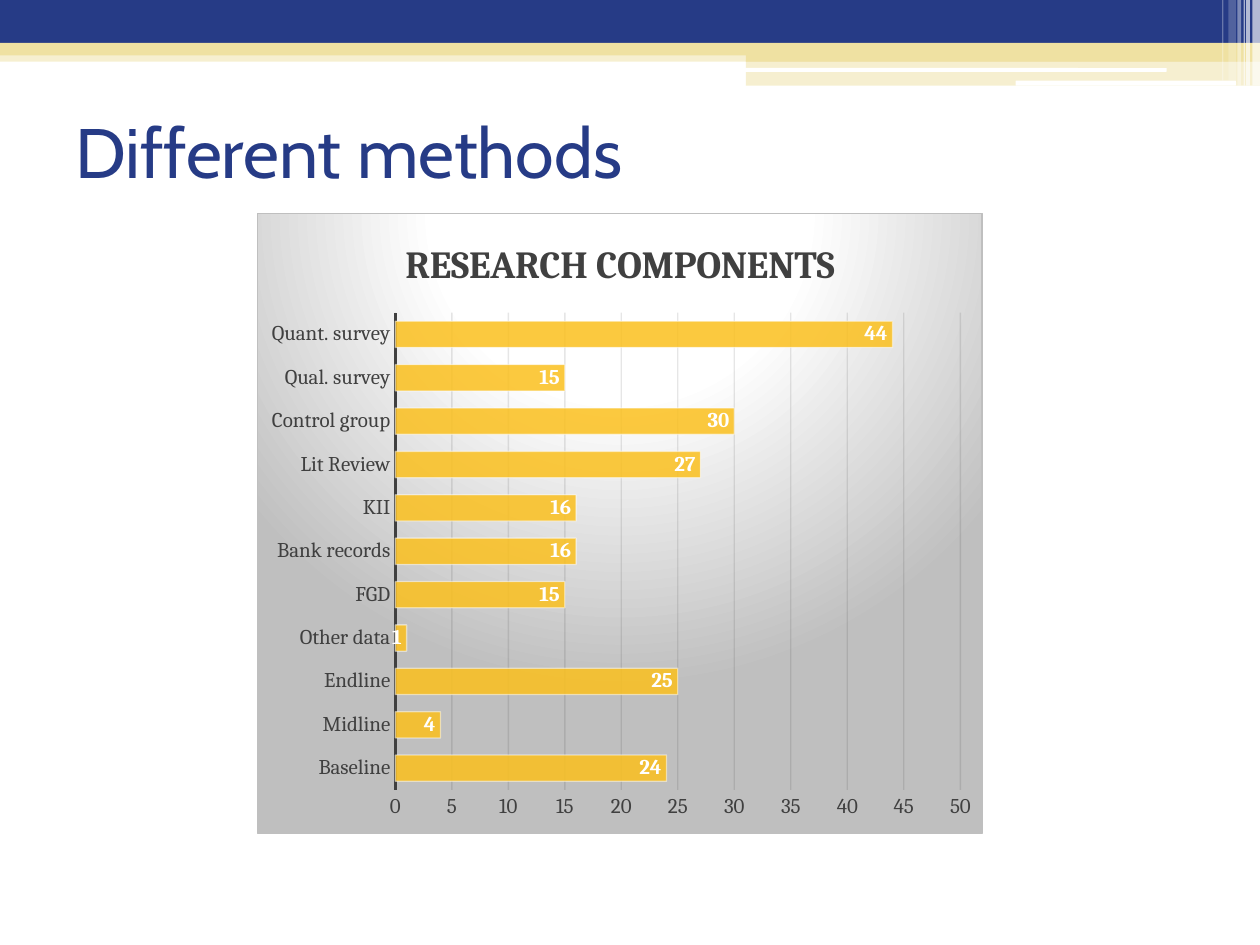
from lxml.etree import SubElement as Sub
from pptx import Presentation
from pptx.chart.data import CategoryChartData as Data
from pptx.dml.color import RGBColor as Rgb
from pptx.enum.chart import XL_CHART_TYPE as Kind, XL_LABEL_POSITION as Pos, XL_TICK_MARK as Tick
from pptx.enum.shapes import MSO_SHAPE as Form
from pptx.enum.text import MSO_ANCHOR as Anchor
from pptx.oxml import parse_xml as to_xml
from pptx.oxml.ns import nsdecls, qn
from pptx.util import Inches, Pt

HUES = {"navy": "263B86", "sand": "EFE1A2", "white": "FFFFFF", "gold": "FBC01E",
        "text": "404040", "grid": "0D0D0D", "edge": "BFBFBF"}
COLS, ROWS = 100, 75
CELL = Inches(0.1)

BANDS = [
    (0, 4, 100, 0.9, "sand", 50), (0, 0, 100, 3.4, "navy", 100),
    (0, 3.4, 100, 1, "sand", 100), (59.2, 3.9, 40.8, 1, "sand", 100),
    (59.2, 4.8, 40.8, 2, "sand", 50),
]
PILLS = [(59.1, 5.4, 33.5, 0.3), (80.6, 6.4, 17.5, 0.4)]
STRIPES = [(99.4, 0.6, 6.8, 65), (98.9, 0.3, 6.8, 65), (98.7, 0.1, 6.8, 60),
           (98.2, 0.3, 6.8, 40), (97.5, 0.6, 6.4, 20), (97, 0.1, 6.4, 30)]
COUNTS = {"Baseline": 24, "Midline": 4, "Endline": 25, "Other data": 1, "FGD": 15,
          "Bank records": 16, "KII": 16, "Lit Review": 27, "Control group": 30,
          "Qual. survey": 15, "Quant. survey": 44}


def span(*cells):
    """Turn grid cells into lengths."""
    return [round(n * CELL) for n in cells]


def paint(fill, hue, alpha=100):
    """Fill with a named colour at a percentage of opacity."""
    fill.solid()
    fill.fore_color.rgb = Rgb.from_string(HUES[hue])
    if alpha < 100:
        tint = fill._xPr.find(qn("a:solidFill"))[0]
        Sub(tint, qn("a:alpha"), val=str(alpha * 1000))


def stroke(line, hue, width, alpha=100):
    """Draw a line in a named colour."""
    paint(line.fill, hue, alpha)
    line.width = Pt(width)


def style(font, face, size, hue, bold=False):
    """Set face, size, colour and weight of a font."""
    font.name, font.size, font.bold = face, Pt(size), bold
    font.color.rgb = Rgb.from_string(HUES[hue])


def block(slide, x, y, w, h, hue, alpha=100, form=Form.RECTANGLE):
    """Add a plain shape without outline."""
    shape = slide.shapes.add_shape(form, *span(x, y, w, h))
    shape.shadow.inherit = False
    shape.line.fill.background()
    paint(shape.fill, hue, alpha)


def banner(slide):
    """Add the bands, pills and stripes along the top."""
    for band in BANDS:
        block(slide, *band)
    for pill in PILLS:
        block(slide, *pill, "white", form=Form.ROUNDED_RECTANGLE)
    for x, w, h, alpha in STRIPES:
        block(slide, x, 0, w, h, "white", alpha)


def title(slide, text):
    """Add the slide heading."""
    frame = slide.shapes.add_textbox(*span(5, 7.3, 90, 9.3)).text_frame
    frame.word_wrap = True
    frame.vertical_anchor = Anchor.MIDDLE
    run = frame.paragraphs[0].add_run()
    run.text = text
    style(run.font, "Cabin", 40, "navy")


def backdrop(chart):
    """Give the chart area a radial gradient and a border."""
    stops = "".join(
        f'<a:gs pos="{at * 1000}"><a:srgbClr val="{HUES[hue]}"/></a:gs>'
        for at, hue in ((0, "white"), (39, "white"), (100, "edge")))
    area = to_xml(
        f'<c:spPr {nsdecls("c", "a")}><a:gradFill><a:gsLst>{stops}</a:gsLst>'
        '<a:path path="circle"><a:fillToRect l="50000" t="-80000" r="50000" b="180000"/>'
        f'</a:path></a:gradFill><a:ln w="{Pt(0.75)}"><a:solidFill>'
        f'<a:srgbClr val="{HUES["edge"]}"/></a:solidFill></a:ln></c:spPr>')
    chart._chartSpace.find(qn("c:chart")).addnext(area)


def place(chart, **box):
    """Fix the inner plot area as shares of the chart."""
    plot = chart._chartSpace.find(qn("c:chart")).find(qn("c:plotArea"))
    old = plot.find(qn("c:layout"))
    if old is not None:
        plot.remove(old)
    frame = to_xml(f'<c:layout {nsdecls("c")}/>')
    plot.insert(0, frame)
    inner = Sub(frame, qn("c:manualLayout"))
    Sub(inner, qn("c:layoutTarget"), val="inner")
    for key in "xy":
        Sub(inner, qn(f"c:{key}Mode"), val="edge")
    for key, share in box.items():
        Sub(inner, qn(f"c:{key}"), val=str(share))


def axes(chart):
    """Style both axes and the grid."""
    cats, vals = chart.category_axis, chart.value_axis
    for axis in (cats, vals):
        axis.major_tick_mark = axis.minor_tick_mark = Tick.NONE
        style(axis.tick_labels.font, "Cambria", 12, "text")
    cats.has_major_gridlines = False
    stroke(cats.format.line, "text", 1.5)
    vals.minimum_scale, vals.maximum_scale, vals.major_unit = 0, 50, 5
    vals.format.line.fill.background()
    stroke(vals.major_gridlines.format.line, "grid", 0.75, 10)


def bars(slide, head):
    """Add the bar chart of research components."""
    data = Data()
    data.categories = list(COUNTS)
    data.add_series("Series 1", list(COUNTS.values()))
    chart = slide.shapes.add_chart(
        Kind.BAR_CLUSTERED, *span(20.4, 16.9, 57.6, 49.3), data).chart
    chart.font.name, chart.font.size = "Cambria", Pt(10)
    chart.has_legend = False
    run = chart.chart_title.text_frame.paragraphs[0].add_run()
    run.text = head
    style(run.font, "Cambria", 22, "text", True)
    axes(chart)
    plot = chart.plots[0]
    plot.gap_width, plot.vary_by_categories = 65, False
    row = plot.series[0]
    paint(row.format.fill, "gold", 85)
    stroke(row.format.line, "white", 0.75, 50)
    tags = row.data_labels
    tags.show_value, tags.position = True, Pos.INSIDE_END
    style(tags.font, "Cambria", 12, "white", True)
    backdrop(chart)
    place(chart, x=0.19, y=0.16, w=0.78, h=0.77)


def main():
    """Build and save the slide."""
    deck = Presentation()
    deck.slide_width, deck.slide_height = span(COLS, ROWS)
    slide = deck.slides.add_slide(deck.slide_layouts[6])
    banner(slide)
    title(slide, "Different methods")
    bars(slide, "RESEARCH COMPONENTS")
    deck.save("out.pptx")


if __name__ == "__main__":
    main()
